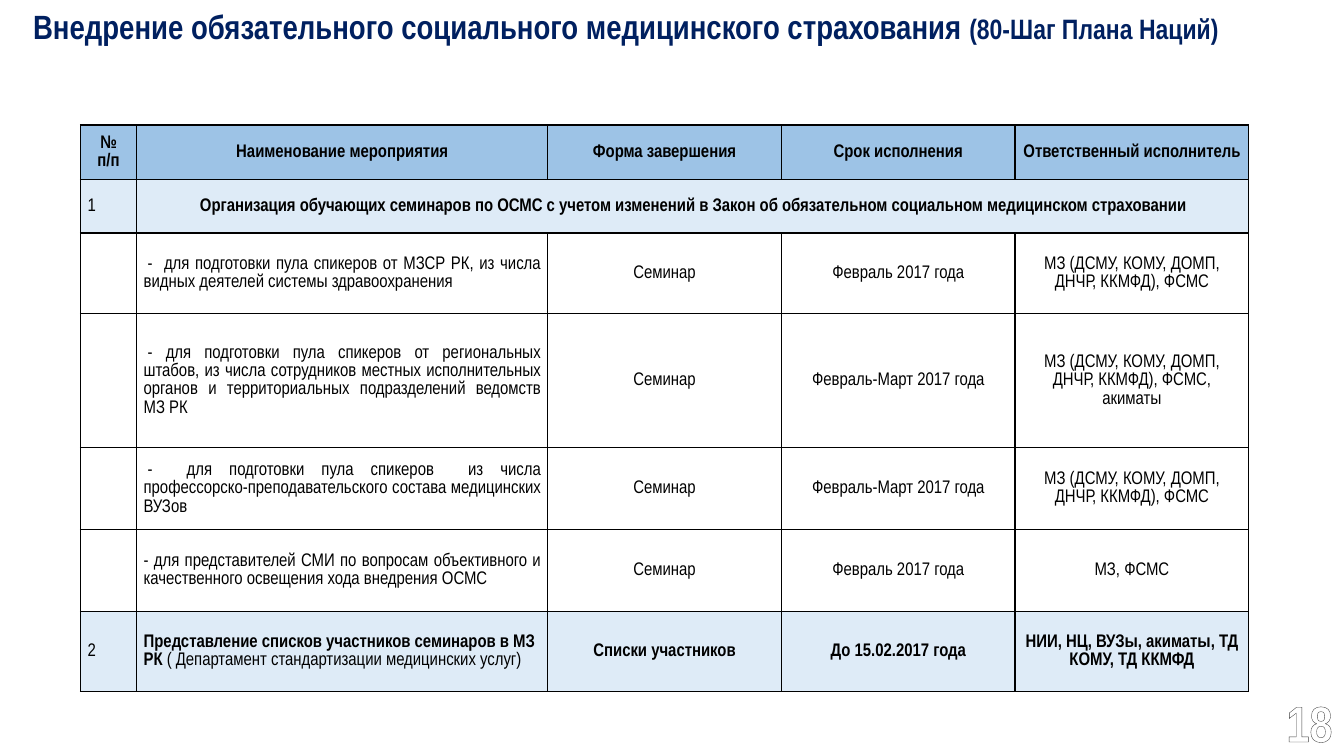
from dataclasses import dataclass
from typing import Any

from lxml.etree import SubElement
from pptx import Presentation
from pptx.dml.color import RGBColor
from pptx.enum.text import MSO_ANCHOR as ANCHOR, MSO_AUTO_SIZE as FIT, PP_ALIGN as ALIGN
from pptx.oxml import parse_xml
from pptx.oxml.ns import nsdecls, qn
from pptx.util import Cm, Pt

COLS = [1.41, 10.36, 5.89, 5.89, 5.89]
ROWS = [1.37, 1.35, 2.03, 3.38, 2.06, 2.06, 2.03]
HEADER, SECTION = "9DC3E6", "DEEBF7"
SECTION_ROW, LISTS_ROW = 1, 6
FILLS = {0: HEADER, SECTION_ROW: SECTION, LISTS_ROW: SECTION}
INDENTED_ROWS = (2, 3, 4)
MINISTRY = "МЗ (ДСМУ, КОМУ, ДОМП, ДНЧР, ККМФД), ФСМС"

PLAN = [
    ["№ п/п", "Наименование мероприятия", "Форма завершения", "Срок исполнения",
     "Ответственный исполнитель"],
    ["1", "Организация обучающих семинаров по ОСМС с учетом изменений в Закон "
     "об обязательном социальном медицинском страховании"],
    ["", "-  для подготовки пула спикеров от МЗСР РК, из числа видных деятелей "
     "системы здравоохранения", "Семинар", "Февраль 2017 года", MINISTRY],
    ["", "- для подготовки пула спикеров от региональных штабов, из числа сотрудников "
     "местных исполнительных органов и территориальных подразделений ведомств МЗ РК",
     "Семинар", "Февраль-Март 2017 года", MINISTRY + ", акиматы"],
    ["", "-  для подготовки пула спикеров  из числа профессорско-преподавательского "
     "состава медицинских ВУЗов", "Семинар", "Февраль-Март 2017 года", MINISTRY],
    ["", "- для представителей СМИ по вопросам объективного и качественного освещения "
     "хода внедрения ОСМС", "Семинар", "Февраль 2017 года", "МЗ, ФСМС"],
    ["2", "Представление списков участников семинаров в МЗ РК ", "Списки участников",
     "До 15.02.2017 года", "НИИ, НЦ, ВУЗы, акиматы, ТД КОМУ, ТД ККМФД"],
]


def rgb(color):
    return RGBColor.from_string(color)


@dataclass
class SlideBuilder:
    s: Any
    font: str = "Arial Narrow"
    ink: str = "000000"
    accent: str = "002060"

    def style(self, r, size, color, bold):
        r.font.name, r.font.size, r.font.bold = self.font, Pt(size), bold
        r.font.color.rgb = rgb(color)

    def title(self, text, note):
        sp = self.s.shapes.title
        sp.left, sp.top, sp.width, sp.height = Cm(0.58), Cm(0.03), Cm(33.2), Cm(1.3)
        tf = sp.text_frame
        tf.auto_size, tf.vertical_anchor = FIT.SHAPE_TO_FIT_TEXT, ANCHOR.TOP
        tf.text = text
        p = tf.paragraphs[0]
        p.alignment = ALIGN.LEFT
        p.add_run().text = note
        for r, size in zip(p.runs, (24, 20)):
            self.style(r, size, self.accent, True)

    def page_number(self, text):
        tf = self.s.shapes.add_textbox(Cm(31.85), Cm(17.68), Cm(1.98), Cm(1.02)).text_frame
        tf.word_wrap, tf.vertical_anchor = True, ANCHOR.MIDDLE
        tf.text = text
        p = tf.paragraphs[0]
        p.alignment = ALIGN.RIGHT
        r = p.runs[0]
        self.style(r, 36, "FFFFFF", True)
        r.font._element.insert(0, parse_xml(
            f'<a:ln {nsdecls("a")} w="{Pt(0.8)}"><a:solidFill>'
            '<a:srgbClr val="404040"/></a:solidFill></a:ln>'))

    def border(self, cell):
        tc_pr = cell._tc.get_or_add_tcPr()
        for side in ("lnL", "lnR", "lnT", "lnB"):
            ln = SubElement(tc_pr, qn(f"a:{side}"), w=str(Pt(1)))
            SubElement(SubElement(ln, qn("a:solidFill")), qn("a:srgbClr"), val=self.ink)

    def cell(self, cell, text, fill, align, bold):
        self.border(cell)
        if fill:
            cell.fill.solid()
            cell.fill.fore_color.rgb = rgb(fill)
        else:
            cell.fill.background()
        cell.vertical_anchor = ANCHOR.MIDDLE
        cell.margin_left = cell.margin_right = Cm(0.18)
        cell.margin_top = cell.margin_bottom = 0
        cell.text_frame.text = text
        p = cell.text_frame.paragraphs[0]
        p.alignment, p.line_spacing = align, 1.07
        for r in p.runs:
            self.style(r, 13, self.ink, bold)
        return p

    def plan_table(self, rows):
        table = self.s.shapes.add_table(len(ROWS), len(COLS), Cm(2.03), Cm(3.15),
                                        Cm(sum(COLS)), Cm(sum(ROWS))).table
        table.first_row = table.horz_banding = False
        for column, width in zip(table.columns, COLS):
            column.width = Cm(width)
        for row, height in zip(table.rows, ROWS):
            row.height = Cm(height)
        table.cell(SECTION_ROW, 1).merge(table.cell(SECTION_ROW, len(COLS) - 1))
        for i, texts in enumerate(rows):
            for j in range(len(COLS)):
                text = texts[j] if j < len(texts) else ""
                align = ALIGN.CENTER
                if j == 0 and i > 0 or (i, j) == (LISTS_ROW, 1):
                    align = ALIGN.LEFT
                elif j == 1 and i > SECTION_ROW:
                    align = ALIGN.JUSTIFY
                bold = i == 0 or (i in FILLS and j > 0)
                p = self.cell(table.cell(i, j), text, FILLS.get(i), align, bold)
                if j == 1 and i in INDENTED_ROWS:
                    p._p.get_or_add_pPr().set("indent", str(Cm(0.1)))
        department = table.cell(LISTS_ROW, 1).text_frame.paragraphs[0].add_run()
        department.text = "( Департамент стандартизации медицинских услуг)"
        self.style(department, 13, self.ink, False)


def main():
    prs = Presentation()
    prs.slide_width, prs.slide_height = Cm(33.87), Cm(19.05)
    title_only = prs.slide_layouts[5]
    slide = SlideBuilder(prs.slides.add_slide(title_only))
    slide.page_number("18")
    slide.title("Внедрение обязательного социального медицинского страхования ",
                "(80-Шаг Плана Наций)")
    slide.plan_table(PLAN)
    prs.save("out.pptx")


if __name__ == "__main__":
    main()
